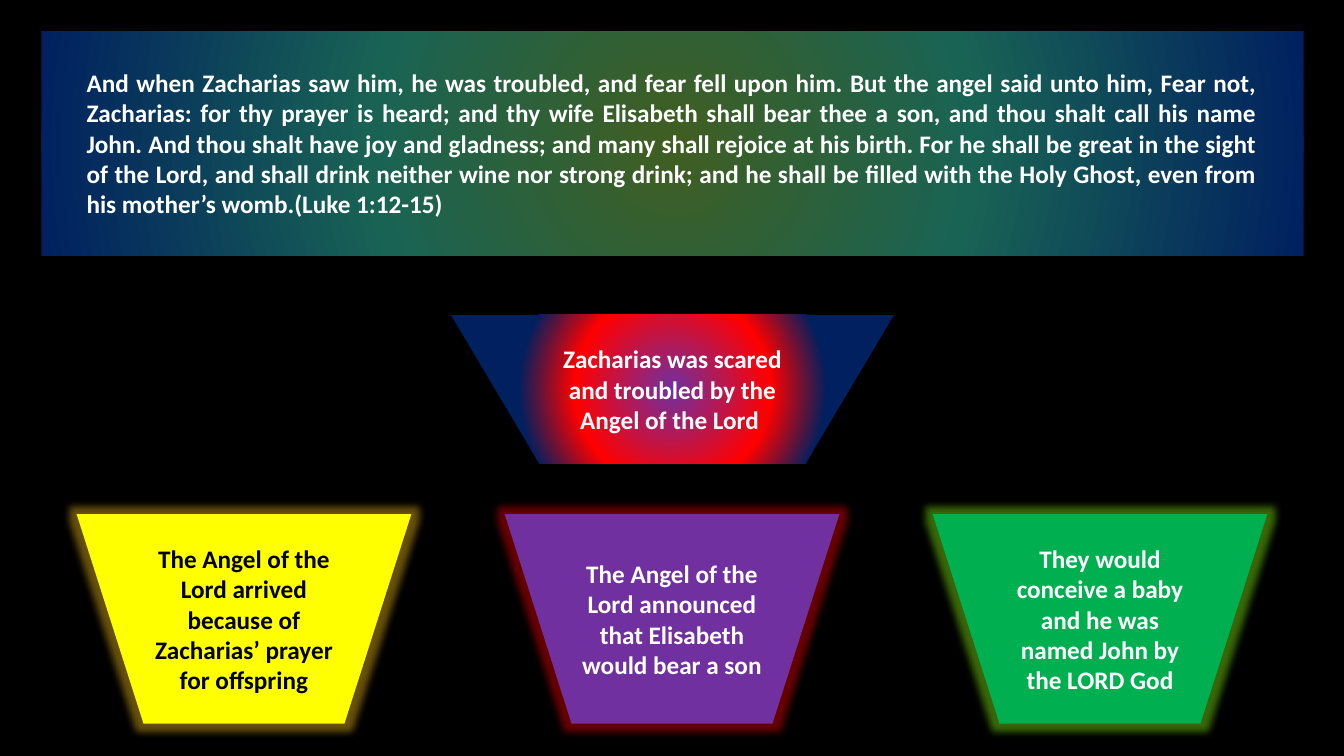
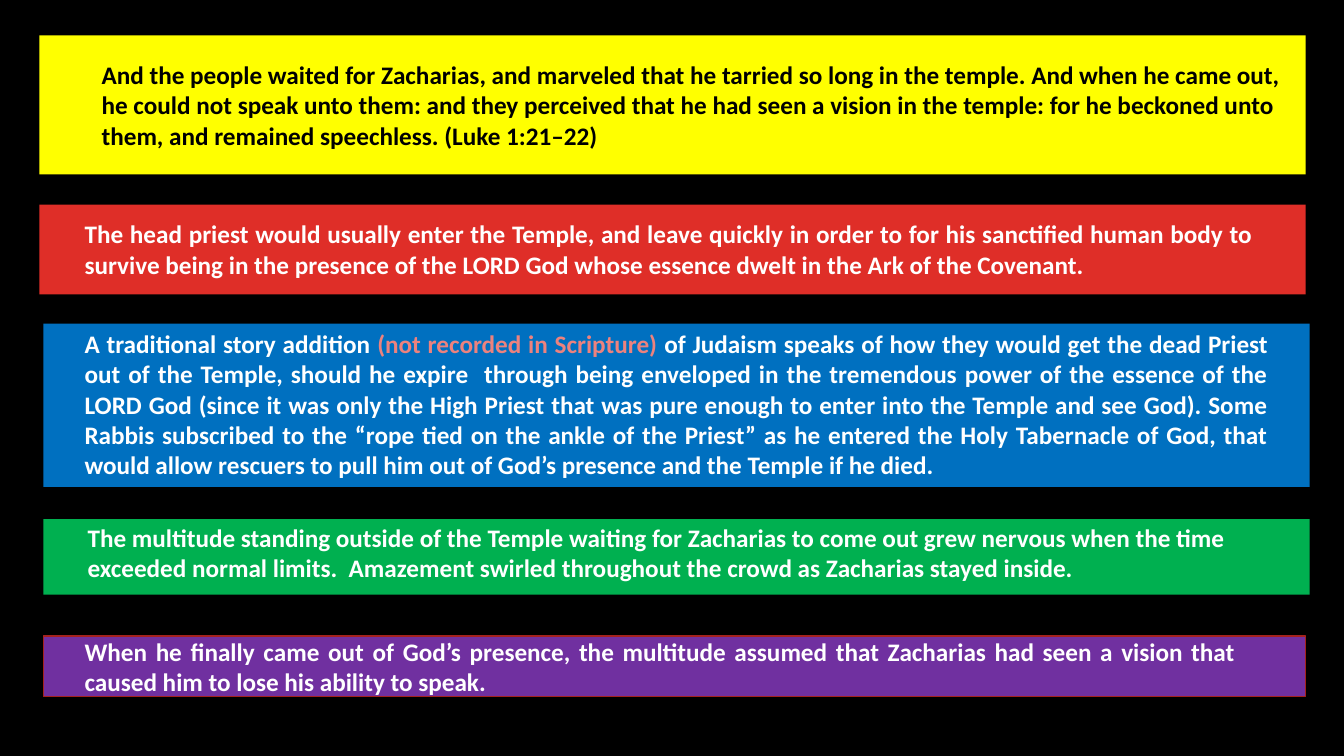
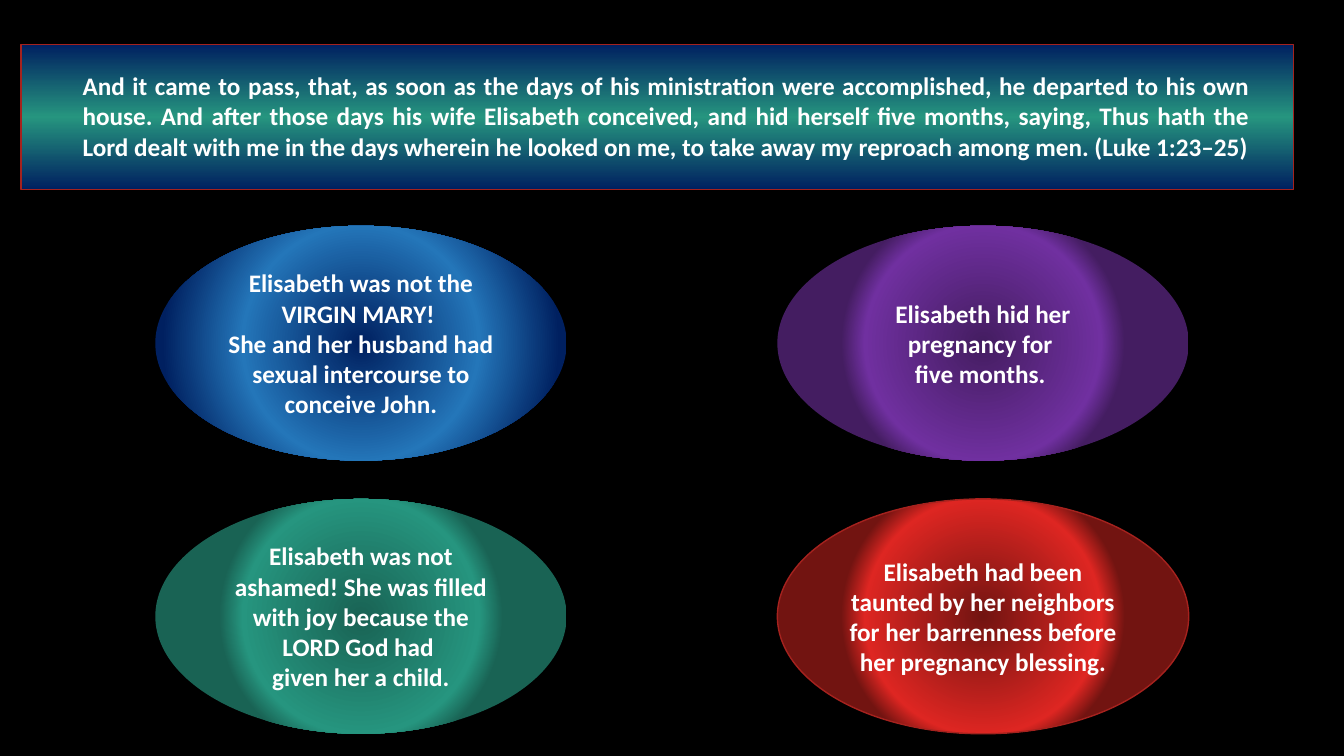
import pptx
import pptx.dml.color
import pptx.enum.shapes
import pptx.enum.text
import pptx.oxml
import pptx.oxml.ns
import pptx.util

Inches = pptx.util.Inches
Pt = pptx.util.Pt
SHAPES = pptx.enum.shapes.MSO_SHAPE
ALIGN = pptx.enum.text.PP_ALIGN
ANCHOR = pptx.enum.text.MSO_ANCHOR

FONT, TEXT_SIZE = "Calibri", 18
COLORS = {
    "black": "000000", "white": "FFFFFF", "yellow": "FFFF00", "purple": "7030A0",
    "green": "00B050", "blue": "0070C0", "red": "DF2E28", "pink": "EC827E",
    "outline": "A5221E", "gold glow": "FFC81E", "red glow": "FF0000",
    "green glow": "8CFF14", "navy": "002060", "olive": "405E21",
    "dark teal": "196354", "teal": "26957F", "pure red": "FF0000",
    "sky": "2476B9", "dark purple": "441D61", "dark red": "721411",
    "bright red": "DE2622",
}
# Gradient stops: (percent, colour)
GRADIENTS = {
    "verse glow": [(0, "olive"), (47, "dark teal"), (100, "navy")],
    "fear": [(0, "purple"), (42, "pure red"), (66, "navy")],
    "verse bars": [(0, "navy"), (50, "teal"), (100, "navy")],
    "blue oval": [(0, "navy"), (50, "sky"), (84, "navy")],
    "purple oval": [(0, "dark purple"), (50, "purple"), (60, "dark purple")],
    "teal oval": [(0, "dark teal"), (50, "teal"), (60, "dark teal")],
    "red oval": [(0, "dark red"), (50, "bright red"), (60, "dark red")],
}
LINEAR_GRADIENTS = {"verse bars"}

# Panels: rectangle, fill, outline, text box, alignment, text colour, runs
FEAR_PANEL = (
    (0.41, 0.31, 12.52, 2.23), "verse glow", None,
    (0.76, 0.62, 11.81, 1.62), ALIGN.JUSTIFY, "white",
    "And when Zacharias saw him, he was troubled, and fear fell upon him. But the angel "
    "said unto him, Fear not, Zacharias: for thy prayer is heard; and thy wife Elisabeth "
    "shall bear thee a son, and thou shalt call his name John. And thou shalt have joy and "
    "gladness; and many shall rejoice at his birth. For he shall be great in the sight of "
    "the Lord, and shall drink neither wine nor strong drink; and he shall be filled with "
    "the Holy Ghost, even from his mother’s womb.(Luke 1:12-15)")
FEAR_SUMMARY = "Zacharias was scared and troubled by the Angel of the Lord "
ANNOUNCEMENTS = [
    ("The Angel of the Lord arrived because of Zacharias’ prayer for offspring",
     "yellow", "black", "gold glow"),
    ("The Angel of the Lord announced that Elisabeth would bear a son",
     "purple", "white", "red glow"),
    ("They would conceive a baby and he was named John by the LORD God",
     "green", "white", "green glow"),
]
TEMPLE_PANELS = [
    ((0.39, 0.35, 12.56, 1.38), "yellow", None,
     (0.91, 0.54, 12.04, 1.01), ALIGN.LEFT, "black",
     "And the people waited for Zacharias, and marveled that he tarried so long in the "
     "temple. And when he came out, he could not speak unto them: and they perceived that "
     "he had seen a vision in the temple: for he beckoned unto them, and remained "
     "speechless. (Luke 1:21–22)"),
    ((0.39, 2.03, 12.56, 0.89), "red", None,
     (0.74, 2.12, 11.79, 0.71), ALIGN.JUSTIFY, "white",
     "The head priest would usually enter the Temple, and leave quickly in order to for his "
     "sanctified human body to survive being in the presence of the LORD God whose essence "
     "dwelt in the Ark of the Covenant."),
    ((0.43, 3.21, 12.56, 1.62), "blue", None,
     (0.74, 3.21, 11.94, 1.62), ALIGN.JUSTIFY, "white",
     [("A traditional story addition ", "white"),
      ("(not recorded in Scripture) ", "pink"),
      ("of Judaism speaks of how they would get the dead Priest out of the Temple, should he "
       "expire  through being enveloped in the tremendous power of the essence of the LORD "
       "God (since it was only the High Priest that was pure enough to enter into the Temple "
       "and see God). Some Rabbis subscribed to the “rope tied on the ankle of the Priest” "
       "as he entered the Holy Tabernacle of God, that would allow rescuers to pull him out "
       "of God’s presence and the Temple if he died.", "white")]),
    ((0.43, 5.15, 12.56, 0.75), "green", None,
     (0.77, 5.13, 11.79, 0.71), ALIGN.LEFT, "white",
     "The multitude standing outside of the Temple waiting for Zacharias to come out grew "
     "nervous when the time exceeded normal limits.  Amazement swirled throughout the crowd "
     "as Zacharias stayed inside."),
    ((0.43, 6.31, 12.52, 0.6), "purple", "outline",
     (0.74, 6.26, 11.62, 0.71), ALIGN.JUSTIFY, "white",
     "When he finally came out of God’s presence, the multitude assumed that Zacharias had "
     "seen a vision that caused him to lose his ability to speak."),
]
CONCEPTION_PANEL = (
    (0.21, 0.44, 12.62, 1.44), "verse bars", "outline",
    (0.72, 0.65, 11.78, 1.01), ALIGN.JUSTIFY, "white",
    "And it came to pass, that, as soon as the days of his ministration were accomplished, "
    "he departed to his own house. And after those days his wife Elisabeth conceived, and "
    "hid herself five months, saying, Thus hath the Lord dealt with me in the days wherein "
    "he looked on me, to take away my reproach among men. (Luke 1:23–25)")
OVALS = [
    (["Elisabeth was not the VIRGIN MARY! ",
      "She and her husband had sexual intercourse to conceive John."], "blue oval", None),
    (["Elisabeth hid her pregnancy for ", "five months. "], "purple oval", None),
    (["Elisabeth was not ashamed! She was filled with joy because the LORD God had ",
      "given her a child."], "teal oval", None),
    (["Elisabeth had been taunted by her neighbors for her barrenness before her "
      "pregnancy blessing."], "red oval", "outline"),
]


def rgb(name):
    return pptx.dml.color.RGBColor.from_string(COLORS[name])


def parse(tag, body):
    namespace = pptx.oxml.ns.nsdecls("a")
    return pptx.oxml.parse_xml(f"<a:{tag} {namespace}>{body}</a:{tag}>")


def apply_gradient(shape, name):
    stops = "".join(f'<a:gs pos="{percent * 1000}"><a:srgbClr val="{COLORS[color]}"/></a:gs>'
                    for percent, color in GRADIENTS[name])
    if name in LINEAR_GRADIENTS:
        direction = '<a:lin ang="5400000" scaled="0"/>'
    else:
        direction = ('<a:path path="circle"><a:fillToRect l="50000" t="50000" '
                     'r="50000" b="50000"/></a:path>')
    shape.fill.gradient()
    properties = shape.element.spPr
    properties.replace(properties.find(pptx.oxml.ns.qn("a:gradFill")),
                       parse("gradFill", f"<a:gsLst>{stops}</a:gsLst>{direction}"))


def write_text(shape, paragraphs, color="white", align=ALIGN.CENTER, anchor=ANCHOR.MIDDLE):
    """Each paragraph is a string, or a list of (text, colour) runs."""
    frame = shape.text_frame
    frame.word_wrap = True
    frame.vertical_anchor = anchor
    for index, content in enumerate(paragraphs):
        paragraph = frame.add_paragraph() if index else frame.paragraphs[0]
        paragraph.alignment = align
        runs = [(content, color)] if isinstance(content, str) else content
        for text, run_color in runs:
            run = paragraph.add_run()
            run.text = text
            run.font.name = FONT
            run.font.size = Pt(TEXT_SIZE)
            run.font.bold = True
            run.font.color.rgb = rgb(run_color)


def add_filled_shape(slide, kind, box, fill, outline=None, glow=None):
    shape = slide.shapes.add_shape(kind, *map(Inches, box))
    shape.shadow.inherit = False
    if fill in GRADIENTS:
        apply_gradient(shape, fill)
    else:
        shape.fill.solid()
        shape.fill.fore_color.rgb = rgb(fill)
    if outline:
        shape.line.color.rgb = rgb(outline)
        shape.line.width = Pt(1)
    else:
        shape.line.fill.background()
    if glow:
        halo = parse("glow", f'<a:srgbClr val="{COLORS[glow]}"><a:alpha val="40000"/></a:srgbClr>')
        halo.set("rad", str(Pt(11)))
        shape.element.spPr.find(pptx.oxml.ns.qn("a:effectLst")).append(halo)
    return shape


def add_panel(slide, box, fill, outline, text_box, align, color, content):
    add_filled_shape(slide, SHAPES.RECTANGLE, box, fill, outline)
    label = slide.shapes.add_textbox(*map(Inches, text_box))
    write_text(label, [content], color=color, align=align, anchor=ANCHOR.TOP)


def build_fear_slide(slide):
    add_panel(slide, *FEAR_PANEL)
    summary = add_filled_shape(slide, SHAPES.FLOWCHART_MANUAL_OPERATION,
                               (4.47, 3.12, 4.4, 1.48), "fear")
    write_text(summary, [FEAR_SUMMARY])
    left, right, width = 0.76, 12.57, 3.32
    step = (right - left - width) / (len(ANNOUNCEMENTS) - 1)
    for index, (text, fill, color, glow) in enumerate(ANNOUNCEMENTS):
        shape = add_filled_shape(slide, SHAPES.FLOWCHART_MANUAL_OPERATION,
                                 (left + index * step, 5.1, width, 2.08), fill, glow=glow)
        write_text(shape, [text], color=color)


def build_temple_slide(slide):
    for panel in TEMPLE_PANELS:
        add_panel(slide, *panel)


def build_conception_slide(slide):
    add_panel(slide, *CONCEPTION_PANEL)
    for index, (paragraphs, fill, outline) in enumerate(OVALS):
        row, column = divmod(index, 2)
        box = (1.54 + column * 6.17, 2.24 + row * 2.71, 4.08, 2.33)
        write_text(add_filled_shape(slide, SHAPES.OVAL, box, fill, outline), paragraphs)


def main():
    presentation = pptx.Presentation()
    presentation.slide_width = Inches(13.33)
    presentation.slide_height = Inches(7.5)
    background = presentation.slide_master.background.fill
    background.solid()
    background.fore_color.rgb = rgb("black")
    for build in (build_fear_slide, build_temple_slide, build_conception_slide):
        build(presentation.slides.add_slide(presentation.slide_layouts[6]))
    presentation.save("out.pptx")


if __name__ == "__main__":
    main()
